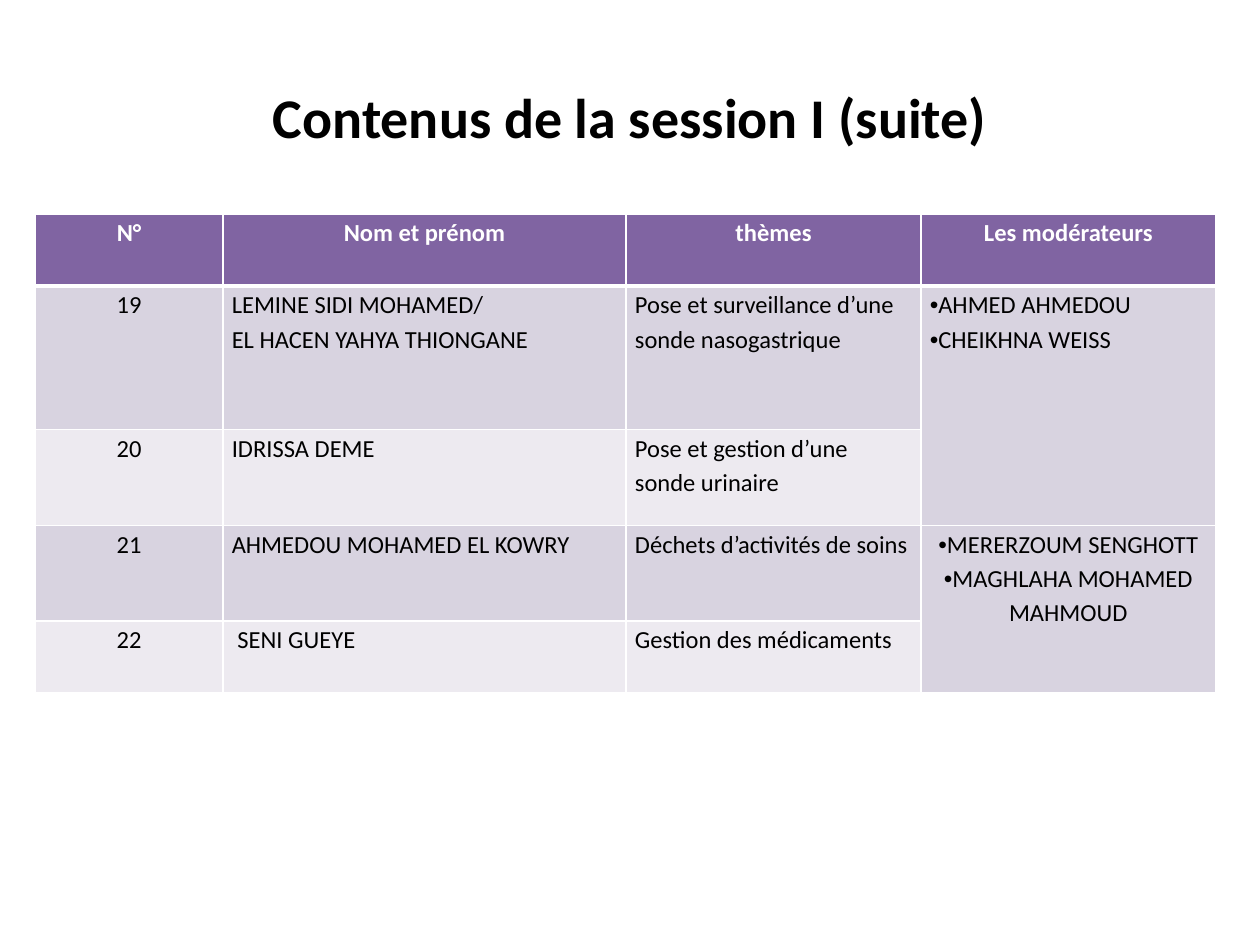
"""Build the session contents slide with its table of speakers, topics and moderators."""
from lxml import etree
from pptx import Presentation
from pptx.dml.color import RGBColor
from pptx.enum.text import MSO_ANCHOR, PP_ALIGN
from pptx.oxml.ns import qn
from pptx.util import Inches, Pt

CENTER, LEFT = PP_ALIGN.CENTER, PP_ALIGN.LEFT
MIDDLE = MSO_ANCHOR.MIDDLE
BLACK = RGBColor(0x00, 0x00, 0x00)
WHITE = RGBColor(0xFF, 0xFF, 0xFF)
PURPLE = RGBColor(0x80, 0x64, 0xA2)
BAND_DARK = RGBColor(0xD8, 0xD3, 0xE0)
BAND_LIGHT = RGBColor(0xED, 0xEA, 0xF0)

COLS = [1.49, 3.2, 2.34, 2.34]
ROWS = [0.57, 1.14, 0.76, 0.76, 0.57]
DATA = [
    ["N°", "Nom et prénom", "thèmes", "Les modérateurs"],
    ["19", "LEMINE SIDI MOHAMED/\nEL HACEN YAHYA THIONGANE",
     "Pose et surveillance d’une sonde nasogastrique", "AHMED AHMEDOU\nCHEIKHNA WEISS"],
    ["20", "IDRISSA DEME", "Pose et gestion d’une sonde urinaire", ""],
    ["21", "AHMEDOU MOHAMED EL KOWRY", "Déchets d’activités de soins",
     "MERERZOUM SENGHOTT\nMAGHLAHA MOHAMED MAHMOUD"],
    ["22", " SENI GUEYE", "Gestion des médicaments", ""],
]


def write(tf, text, size=14, color=BLACK, bold=False, align=LEFT, spacing=None, bullet=False):
    for i, line in enumerate(text.split("\n")):
        p = tf.paragraphs[0] if i == 0 else tf.add_paragraph()
        p.alignment, p.line_spacing = align, spacing
        r = p.add_run()
        r.text = line
        r.font.name, r.font.size, r.font.bold = "Calibri", Pt(size), bold
        r.font.color.rgb = color
        if bullet:
            pPr = p._p.get_or_add_pPr()
            pPr.set("marL", "0")
            pPr.set("indent", "0")
            etree.SubElement(pPr, qn("a:buFont"), typeface="Arial")
            etree.SubElement(pPr, qn("a:buChar"), char="•")


def set_borders(cell, **widths):
    tcPr = cell._tc.get_or_add_tcPr()
    for i, side in enumerate("LRTB"):
        ln = etree.Element(qn(f"a:ln{side}"), w=str(Pt(widths.get(side, 1))))
        fill = etree.SubElement(ln, qn("a:solidFill"))
        etree.SubElement(fill, qn("a:srgbClr"), val=str(WHITE))
        tcPr.insert(i, ln)


prs = Presentation()
prs.slide_width, prs.slide_height = Inches(10), Inches(7.5)
s = prs.slides.add_slide(prs.slide_layouts[5])

title = s.shapes.title
title.left, title.top, title.width, title.height = Inches(0.5), Inches(0.3), Inches(9), Inches(1.25)
title.text_frame.vertical_anchor = MIDDLE
write(title.text_frame, "Contenus de la session I (suite)", size=32, bold=True, align=CENTER)

table = s.shapes.add_table(len(ROWS), len(COLS), Inches(0.28), Inches(1.7),
                           Inches(sum(COLS)), Inches(sum(ROWS))).table
for col, width in zip(table.columns, COLS):
    col.width = Inches(width)
for row, height in zip(table.rows, ROWS):
    row.height = Inches(height)
for top in (1, 3):
    table.cell(top, 3).merge(table.cell(top + 1, 3))

for i, texts in enumerate(DATA):
    header = i == 0
    for j, text in enumerate(texts):
        cell = table.cell(i, j)
        cell.margin_left = cell.margin_right = Inches(0.07)
        cell.margin_top = cell.margin_bottom = 0
        cell.fill.solid()
        cell.fill.fore_color.rgb = PURPLE if header else BAND_DARK if i % 2 or j == 3 else BAND_LIGHT
        set_borders(cell, T=3 if i == 1 else 1, B=3 if header else 1)
        if text:
            centered = header or j == 0 or (i, j) == (3, 3)
            write(cell.text_frame, text, color=WHITE if header else BLACK, bold=header,
                  align=CENTER if centered else LEFT, spacing=1.15, bullet=j == 3 and not header)

prs.save("out.pptx")
